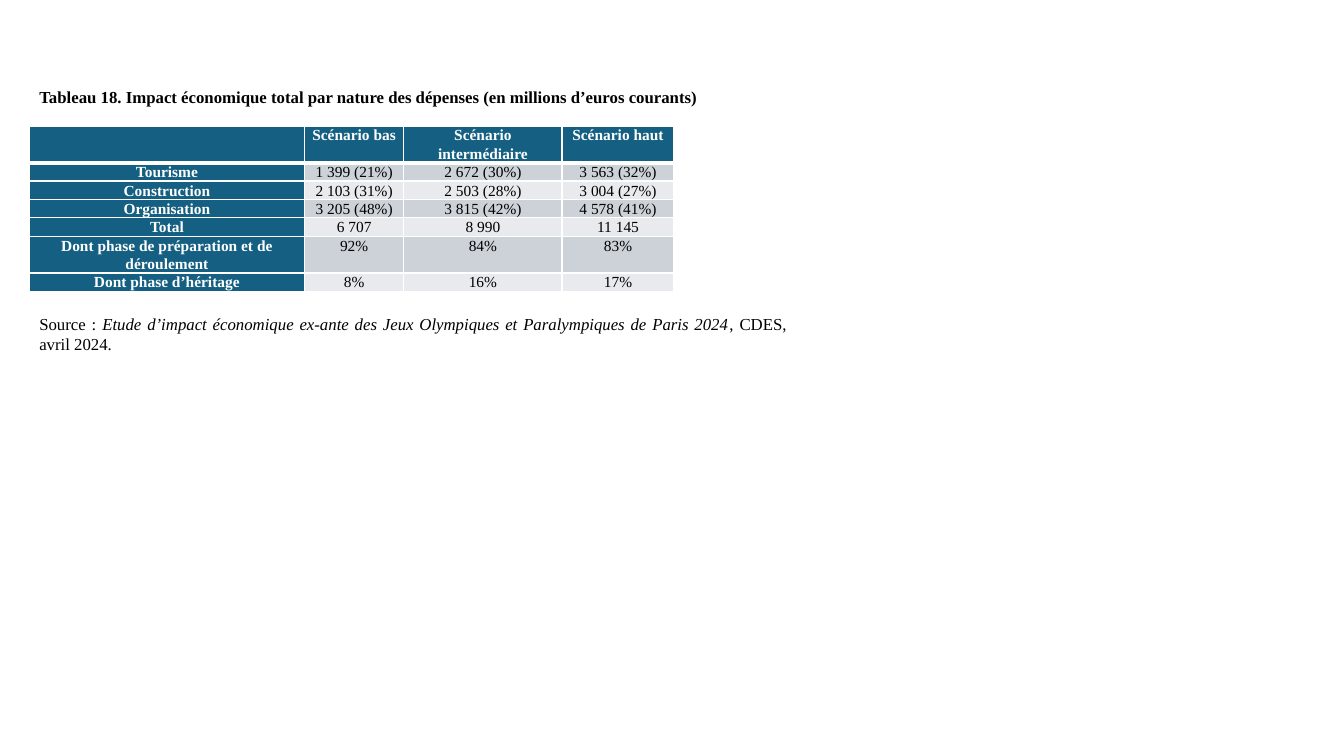
import pptx
import pptx.dml.color
import pptx.enum.text
import pptx.oxml
import pptx.oxml.ns
import pptx.util

Pt = pptx.util.Pt
ALIGN = pptx.enum.text.PP_ALIGN
FONT = "Times New Roman"
BLACK, WHITE, BLUE = "000000", "FFFFFF", "156082"
BANDS = ("CCD2D8", "E8EAED")
LEFT = 21
LINE_HEIGHT = 13

COLUMN_WIDTHS = (196.5, 71, 113, 80)
ROWS = (
    ("", "Scénario bas", "Scénario intermédiaire", "Scénario haut"),
    ("Tourisme", "1 399 (21%)", "2 672 (30%)", "3 563 (32%)"),
    ("Construction", "2 103 (31%)", "2 503 (28%)", "3 004 (27%)"),
    ("Organisation", "3 205 (48%)", "3 815 (42%)", "4 578 (41%)"),
    ("Total", "6 707", "8 990", "11 145"),
    ("Dont phase de préparation et de déroulement", "92%", "84%", "83%"),
    ("Dont phase d’héritage", "8%", "16%", "17%"),
)
TWO_LINE_ROWS = (0, 5)
CAPTION = ("Tableau 18. Impact économique total par nature des dépenses "
           "(en millions d’euros courants)")
STUDY = ("Etude d’impact économique ex-ante des Jeux Olympiques et "
         "Paralympiques de Paris 2024")


def rgb(color):
    return pptx.dml.color.RGBColor.from_string(color)


def set_attributes(obj, values):
    for name, value in values.items():
        setattr(obj, name, value)


def add_run(p, text, size, color=BLACK, **formats):
    r = p.add_run()
    r.text = text
    set_attributes(r.font, {"name": FONT, "size": Pt(size), **formats})
    r.font.color.rgb = rgb(color)


def add_text(s, top, width, height, runs, align=ALIGN.LEFT):
    """Add a 12 pt paragraph made of (text, font formats) pairs."""
    sp = s.shapes.add_textbox(Pt(LEFT), Pt(top), Pt(width), Pt(height))
    tf = sp.text_frame
    tf.word_wrap = True
    p = tf.paragraphs[0]
    p.alignment = align
    for text, formats in runs:
        add_run(p, text, 12, **formats)


def set_borders(cell, widths):
    """Draw white borders; widths maps L, R, T and B, in that order, to points."""
    tcPr = cell._tc.get_or_add_tcPr()
    for i, (side, width) in enumerate(widths.items()):
        tcPr.insert(i, pptx.oxml.parse_xml(
            f'<a:ln{side} {pptx.oxml.ns.nsdecls("a")} w="{Pt(width)}">'
            f'<a:solidFill><a:srgbClr val="{WHITE}"/></a:solidFill></a:ln{side}>'))


def fill_cell(cell, text, row, col):
    heading = row == 0 or col == 0
    set_attributes(cell, {"margin_left": Pt(5), "margin_right": Pt(5),
                          "margin_top": 0, "margin_bottom": 0})
    cell.fill.solid()
    cell.fill.fore_color.rgb = rgb(BLUE if heading else BANDS[(row - 1) % 2])
    set_borders(cell, {"L": 1, "R": 1, "T": 3 if row == 1 else 1,
                       "B": 3 if row == 0 else 1})
    if text:
        p = cell.text_frame.paragraphs[0]
        set_attributes(p, {"alignment": ALIGN.CENTER, "line_spacing": 1.07,
                           "space_after": Pt(8)})
        add_run(p, text, 11, WHITE if heading else BLACK, bold=heading)


def add_impact_table(s, top):
    heights = [LINE_HEIGHT * (2 if i in TWO_LINE_ROWS else 1)
               for i in range(len(ROWS))]
    table = s.shapes.add_table(len(ROWS), len(COLUMN_WIDTHS), Pt(LEFT), Pt(top),
                               Pt(sum(COLUMN_WIDTHS)), Pt(sum(heights))).table
    set_attributes(table, {"first_row": False, "horz_banding": False})
    for column, width in zip(table.columns, COLUMN_WIDTHS):
        column.width = Pt(width)
    for i, texts in enumerate(ROWS):
        table.rows[i].height = Pt(heights[i])
        for j, text in enumerate(texts):
            fill_cell(table.cell(i, j), text, i, j)


def main():
    prs = pptx.Presentation()
    set_attributes(prs, {"slide_width": Pt(960), "slide_height": Pt(540)})
    s = prs.slides.add_slide(prs.slide_layouts[6])
    add_impact_table(s, 90)
    add_text(s, 58.5, 502.5, 21.8, [(CAPTION, {"bold": True})])
    add_text(s, 220.5, 548, 36.4,
             [("Source : ", {}), (STUDY, {"italic": True}),
              (", CDES, avril 2024.", {})], ALIGN.JUSTIFY)
    prs.save("out.pptx")


if __name__ == "__main__":
    main()
